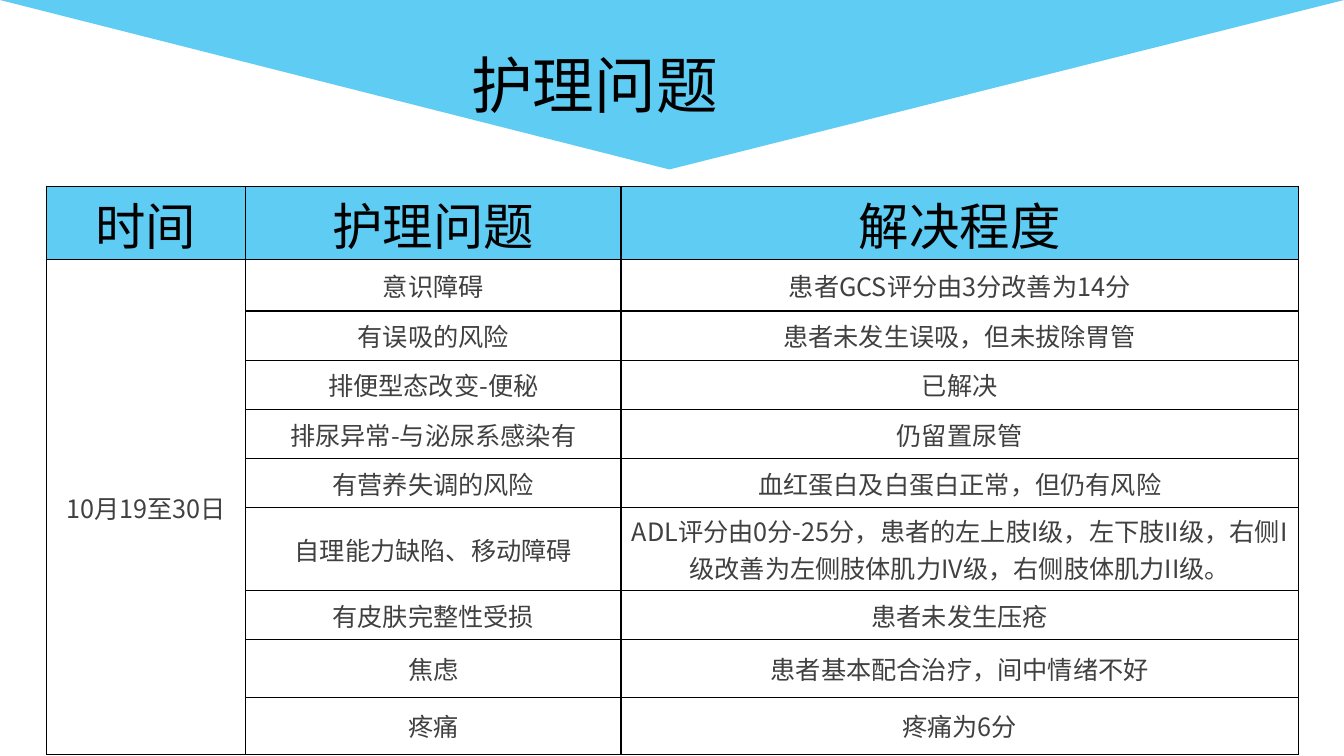
from collections import namedtuple

from lxml.etree import SubElement
from pptx import Presentation
from pptx.dml.color import RGBColor
from pptx.enum.shapes import MSO_SHAPE as Shape
from pptx.enum.text import MSO_ANCHOR as Anchor, MSO_AUTO_SIZE as AutoSize, PP_ALIGN as Align
from pptx.oxml.ns import qn
from pptx.util import Cm, Pt

Box = namedtuple("Box", "left top width height")

SKY = RGBColor(0x5E, 0xCC, 0xF3)
BLACK = RGBColor(0x00, 0x00, 0x00)
GREY = RGBColor(0x40, 0x40, 0x40)
FONT = "Noto Sans CJK SC"

HEADINGS = ["时间", "护理问题", "解决程度"]
PERIOD = "10月19至30日"
PROBLEMS = [
    ("意识障碍", "患者GCS评分由3分改善为14分", 1.3),
    ("有误吸的风险", "患者未发生误吸，但未拔除胃管", 1.24),
    ("排便型态改变-便秘", "已解决", 1.24),
    ("排尿异常-与泌尿系感染有", "仍留置尿管", 1.24),
    ("有营养失调的风险", "血红蛋白及白蛋白正常，但仍有风险", 1.24),
    ("自理能力缺陷、移动障碍",
     "ADL评分由0分-25分，患者的左上肢I级，左下肢II级，"
     "右侧I级改善为左侧肢体肌力IV级，右侧肢体肌力II级。", 2.08),
    ("有皮肤完整性受损", "患者未发生压疮", 1.24),
    ("焦虑", "患者基本配合治疗，间中情绪不好", 1.45),
    ("疼痛", "疼痛为6分", 1.45),
]
HEADER_HEIGHT = 1.24
COLUMN_SHARES = [0.159, 0.3, 0.541]


def add_run(para, text, size, color):
    """Append one run with its Latin and East Asian typeface."""
    span = para.add_run()
    span.text = text
    span.font.size = Pt(size)
    span.font.name = FONT
    span.font.color.rgb = color
    SubElement(span.font._element, qn("a:ea"), typeface=FONT)


def add_borders(cell):
    """Draw a thin black line on the four sides of a cell."""
    properties = cell._tc.get_or_add_tcPr()
    for side in ("lnL", "lnR", "lnT", "lnB"):
        line = SubElement(properties, qn(f"a:{side}"), w=str(Pt(1)))
        fill = SubElement(line, qn("a:solidFill"))
        SubElement(fill, qn("a:srgbClr"), val=str(BLACK))


def style_cell(cell, fill_color=None):
    """Give a cell its borders, fill, margins and anchor."""
    add_borders(cell)
    if fill_color is None:
        cell.fill.background()
    else:
        cell.fill.solid()
        cell.fill.fore_color.rgb = fill_color
    cell.margin_left = cell.margin_right = cell.margin_top = cell.margin_bottom = 0
    cell.vertical_anchor = Anchor.MIDDLE


def write_cell(cell, text, size, color, space_after=4):
    """Write one centred paragraph into a cell."""
    para = cell.text_frame.paragraphs[0]
    para.alignment = Align.CENTER
    para.space_after = Pt(space_after)
    add_run(para, text, size, color)


def add_banner(page, box, title):
    """Place the downward triangle and the title over it."""
    triangle = page.shapes.add_shape(Shape.ISOSCELES_TRIANGLE, *box)
    triangle.adjustments[0] = 0.502
    triangle.rotation = 180
    triangle.shadow.inherit = False
    triangle.fill.solid()
    triangle.fill.fore_color.rgb = SKY
    triangle.line.fill.background()

    label = page.shapes.add_textbox(
        box.left + Cm(11.63), box.top + Cm(1.07), Cm(9.35), Cm(2.11))
    frame = label.text_frame
    frame.word_wrap = True
    frame.auto_size = AutoSize.SHAPE_TO_FIT_TEXT
    para = frame.paragraphs[0]
    para.alignment = Align.JUSTIFY
    add_run(para, title, 44, BLACK)


def add_problem_table(page, box):
    """Fill the box with the table of problems and outcomes."""
    heights = [HEADER_HEIGHT] + [height for _, _, height in PROBLEMS]
    table = page.shapes.add_table(len(heights), len(HEADINGS), *box).table
    table.first_row = table.horz_banding = False
    for column, share in zip(table.columns, COLUMN_SHARES):
        column.width = int(box.width * share)
    for row, height in zip(table.rows, heights):
        row.height = Cm(height)
    for index, row in enumerate(table.rows):
        for cell in row.cells:
            style_cell(cell, SKY if index == 0 else None)

    for column, heading in enumerate(HEADINGS):
        write_cell(table.cell(0, column), heading, 36, BLACK)
    table.cell(1, 0).merge(table.cell(len(PROBLEMS), 0))
    write_cell(table.cell(1, 0), PERIOD, 18, GREY)
    for row, (problem, outcome, _) in enumerate(PROBLEMS, 1):
        space_after = 0 if row == 2 else 4
        write_cell(table.cell(row, 1), problem, 18, GREY, space_after)
        write_cell(table.cell(row, 2), outcome, 18, GREY, space_after)


def main():
    """Build the deck and save it."""
    deck = Presentation()
    deck.slide_width, deck.slide_height = Cm(33.87), Cm(19.05)
    page = deck.slides.add_slide(deck.slide_layouts[6])
    add_problem_table(page, Box(Cm(1.17), Cm(4.7), Cm(31.55), Cm(14)))
    add_banner(page, Box(0, 0, deck.slide_width, Cm(4.27)), "护理问题")
    deck.save("out.pptx")


if __name__ == "__main__":
    main()
